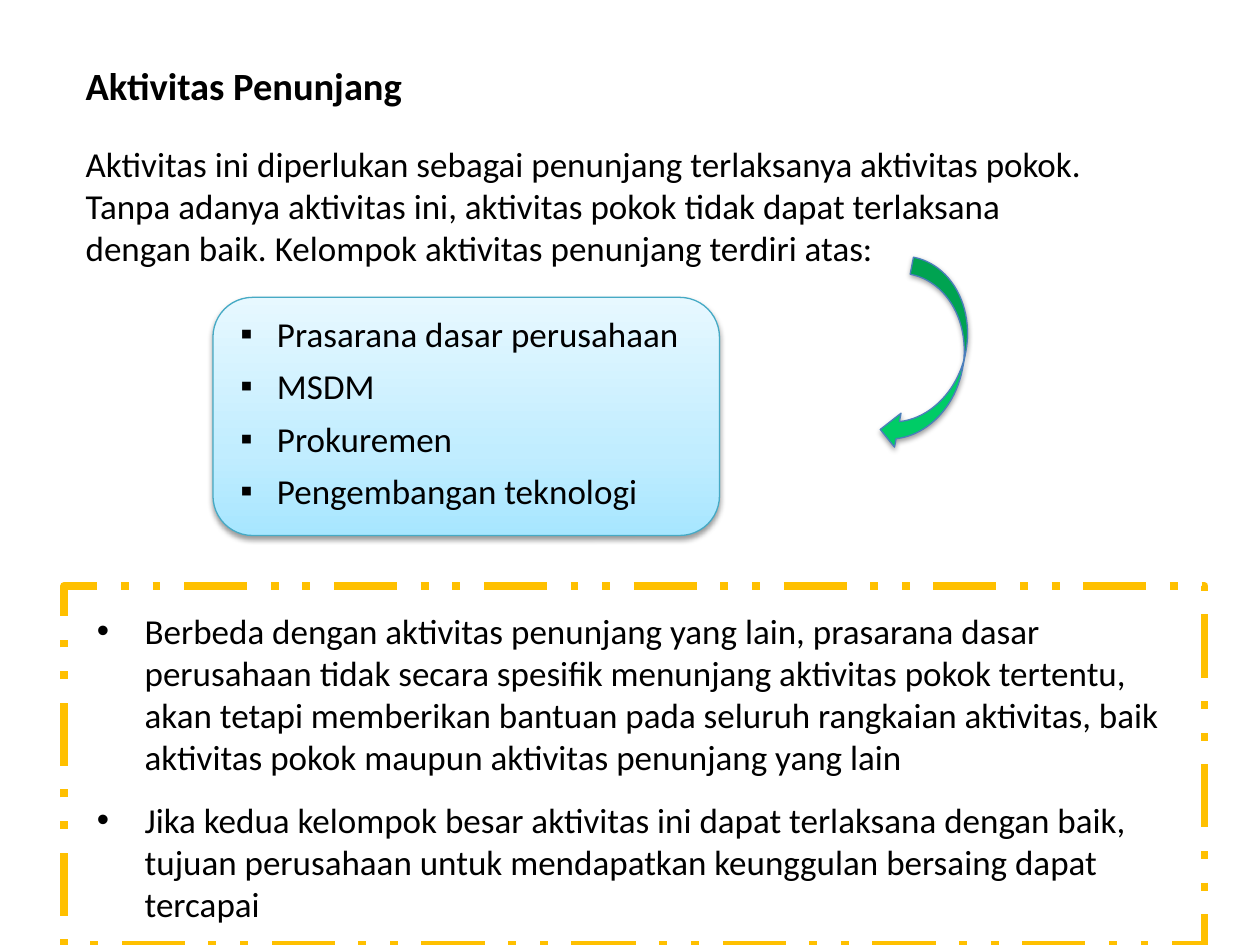
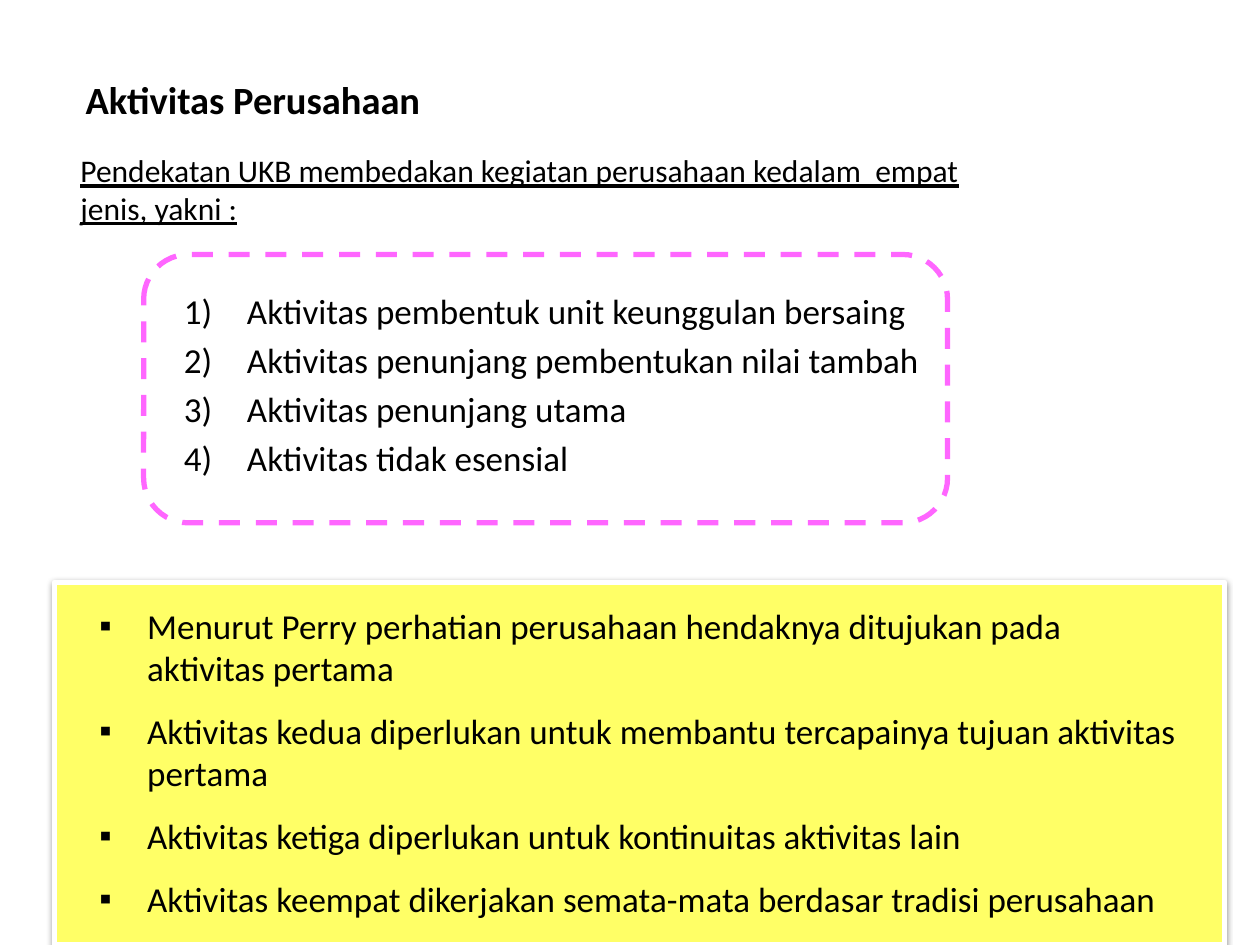
from dataclasses import dataclass

from lxml import etree
from pptx import Presentation
from pptx.dml.color import RGBColor
from pptx.enum import dml, shapes, text
from pptx.oxml import ns, parse_xml
from pptx import util as u

PX = 9144  # EMU per px, 100 px to the inch
FONT = "Calibri"
HUES = {
    "ink": "000000", "paper": "FFFFFF", "amber": "FFC000", "teal": "46AAC5",
    "green": "00CC66", "blue": "4B7EBC", "lemon": "FFFF66", "pink": "FF66FF",
}
SKY = {0: "A7E6FF", 35: "C1EDFF", 100: "E7F8FF"}  # stop in percent: hue
KIND = shapes.MSO_SHAPE
DASH = dml.MSO_LINE
Area = tuple[int, int, int, int]


@dataclass
class Frame:
    at: Area
    kind: KIND
    line: str
    width: float
    fill: str = ""  # empty means the sky gradient
    dash: DASH | None = None
    shade: bool = False
    turn: float = 0


@dataclass
class Mark:
    """Bullet of a list: tag and value of its XML element, and indents."""
    tag: str
    value: str
    left: int
    hang: int


def hue(name: str) -> RGBColor:
    return RGBColor.from_string(HUES[name])


def place(shape, at: Area) -> None:
    shape.left, shape.top, shape.width, shape.height = (n * PX for n in at)


def blend(shape) -> None:
    """Fill from bottom to top with the sky gradient."""
    stops = "".join(
        f'<a:gs pos="{pos * 1000}"><a:srgbClr val="{tone}"/></a:gs>'
        for pos, tone in SKY.items())
    grad = parse_xml(
        f'<a:gradFill {ns.nsdecls("a")} rotWithShape="1"><a:gsLst>{stops}</a:gsLst>'
        '<a:lin ang="16200000" scaled="0"/></a:gradFill>')
    shape._element.spPr.find(ns.qn("a:prstGeom")).addnext(grad)


def cast(shape) -> None:
    """Add a soft shadow below the shape."""
    effects = shape._element.spPr.find(ns.qn("a:effectLst"))
    drop = etree.SubElement(
        effects, ns.qn("a:outerShdw"), blurRad=str(u.Pt(3.1)),
        dist=str(u.Pt(1.6)), dir="5400000", rotWithShape="0")
    tone = etree.SubElement(drop, ns.qn("a:srgbClr"), val=HUES["ink"])
    etree.SubElement(tone, ns.qn("a:alpha"), val="38000")


def draw(slide, frame: Frame) -> None:
    shape = slide.shapes.add_shape(frame.kind, *(n * PX for n in frame.at))
    shape.rotation = frame.turn
    if frame.fill:
        shape.fill.solid()
        shape.fill.fore_color.rgb = hue(frame.fill)
    else:
        blend(shape)
    shape.line.color.rgb = hue(frame.line)
    shape.line.width = u.Pt(frame.width)
    if frame.dash:
        shape.line.dash_style = frame.dash
    shape.shadow.inherit = False
    if frame.shade:
        cast(shape)


def dot(para, mark: Mark | None, left: int) -> None:
    """Set the indents and the bullet of a paragraph."""
    props = para._p.get_or_add_pPr()
    props.set("marL", str((mark.left if mark else left) * PX))
    props.set("indent", str(-mark.hang * PX if mark else 0))
    if not mark:
        etree.SubElement(props, ns.qn("a:buNone"))
        return
    etree.SubElement(props, ns.qn("a:buFont"), typeface="Arial")
    key = "char" if mark.tag == "buChar" else "type"
    etree.SubElement(props, ns.qn(f"a:{mark.tag}"), {key: mark.value})


def say(box, at: Area, lines: list[str], *, size: int = 20, bold: bool = False,
        under: bool = False, gap: int = 0, left: int = 0,
        mark: Mark | None = None, wrap: bool = True) -> None:
    place(box, at)
    body = box.text_frame
    body.word_wrap = wrap
    body.auto_size = text.MSO_AUTO_SIZE.NONE
    body.vertical_anchor = text.MSO_ANCHOR.TOP
    for i, line in enumerate(lines):
        para = body.add_paragraph() if i else body.paragraphs[0]
        dot(para, mark, left)
        para.alignment = text.PP_ALIGN.LEFT
        para.space_before = u.Pt(gap if i else 0)
        run = para.add_run()
        run.text = line
        font = run.font
        font.name, font.size, font.bold = FONT, u.Pt(size), bold
        font.underline = under
        font.color.rgb = hue("ink")


def start(deck, title: str, at: Area, frames: list[Frame]):
    """Add a slide with its frames and title; return it and its body."""
    slide = deck.slides.add_slide(deck.slide_layouts[1])
    for frame in frames:
        draw(slide, frame)
    head, body = slide.placeholders
    for holder in (head, body):  # lift the text above the frames
        slide.shapes._spTree.append(holder._element)
    say(head, at, [title], size=22, bold=True, left=7, wrap=False)
    return slide, body


def note(slide, at: Area, lines: list[str], **style) -> None:
    say(slide.shapes.add_textbox(0, 0, 0, 0), at, lines, **style)


def support(deck) -> None:
    slide, body = start(deck, "Aktivitas Penunjang", (51, 44, 282, 47), [
        Frame((51, 465, 905, 285), KIND.RECTANGLE, "amber", 4.5, "paper",
              DASH.DASH_DOT_DOT),
        Frame((169, 236, 402, 189), KIND.ROUNDED_RECTANGLE, "teal", 0.75,
              shade=True),
        Frame((710, 208, 55, 153), KIND.CURVED_LEFT_ARROW, "blue", 0.75,
              "green", shade=True, turn=10.9),
    ])
    say(body, (51, 108, 827, 120), [
        "Aktivitas ini diperlukan sebagai penunjang terlaksanya aktivitas pokok. "
        "Tanpa adanya aktivitas ini, aktivitas pokok tidak dapat terlaksana "
        "dengan baik. Kelompok aktivitas penunjang terdiri atas:",
    ], left=7)
    note(slide, (67, 479, 890, 266), [
        "Berbeda dengan aktivitas penunjang yang lain, prasarana dasar "
        "perusahaan tidak secara spesifik menunjang aktivitas pokok tertentu, "
        "akan tetapi memberikan bantuan pada seluruh rangkaian aktivitas, baik "
        "aktivitas pokok maupun aktivitas penunjang yang lain",
        "Jika kedua kelompok besar aktivitas ini dapat terlaksana dengan baik, "
        "tujuan perusahaan untuk mendapatkan keunggulan bersaing dapat tercapai",
    ], gap=12, mark=Mark("buChar", "•", 38, 38))
    note(slide, (181, 243, 500, 170), [
        "Prasarana dasar perusahaan",
        "MSDM",
        "Prokuremen",
        "Pengembangan teknologi",
    ], gap=6, mark=Mark("buChar", "▪", 29, 29))


def company(deck) -> None:
    slide, body = start(deck, "Aktivitas Perusahaan", (51, 55, 296, 47), [
        Frame((43, 462, 929, 288), KIND.RECTANGLE, "paper", 3, "lemon",
              shade=True),
        Frame((114, 202, 638, 213), KIND.ROUNDED_RECTANGLE, "pink", 3, "paper",
              DASH.DASH),
    ])
    say(body, (129, 225, 615, 181), [
        "Aktivitas pembentuk unit keunggulan bersaing",
        "Aktivitas penunjang pembentukan nilai tambah",
        "Aktivitas penunjang utama",
        "Aktivitas tidak esensial",
    ], gap=4, mark=Mark("buAutoNum", "arabicParenR", 57, 50))
    note(slide, (54, 115, 718, 71), [
        "Pendekatan UKB membedakan kegiatan perusahaan kedalam  empat jenis, "
        "yakni :",
    ], size=18, under=True)
    note(slide, (62, 475, 890, 263), [
        "Menurut Perry perhatian perusahaan hendaknya ditujukan pada aktivitas "
        "pertama",
        "Aktivitas kedua diperlukan untuk membantu tercapainya tujuan aktivitas "
        "pertama",
        "Aktivitas ketiga diperlukan untuk kontinuitas aktivitas lain",
        "Aktivitas keempat dikerjakan semata-mata berdasar tradisi perusahaan",
    ], gap=12, mark=Mark("buChar", "▪", 45, 38))


def main() -> None:
    deck = Presentation()
    deck.slide_width, deck.slide_height = 1000 * PX, 750 * PX
    support(deck)
    company(deck)
    deck.save("out.pptx")


if __name__ == "__main__":
    main()
